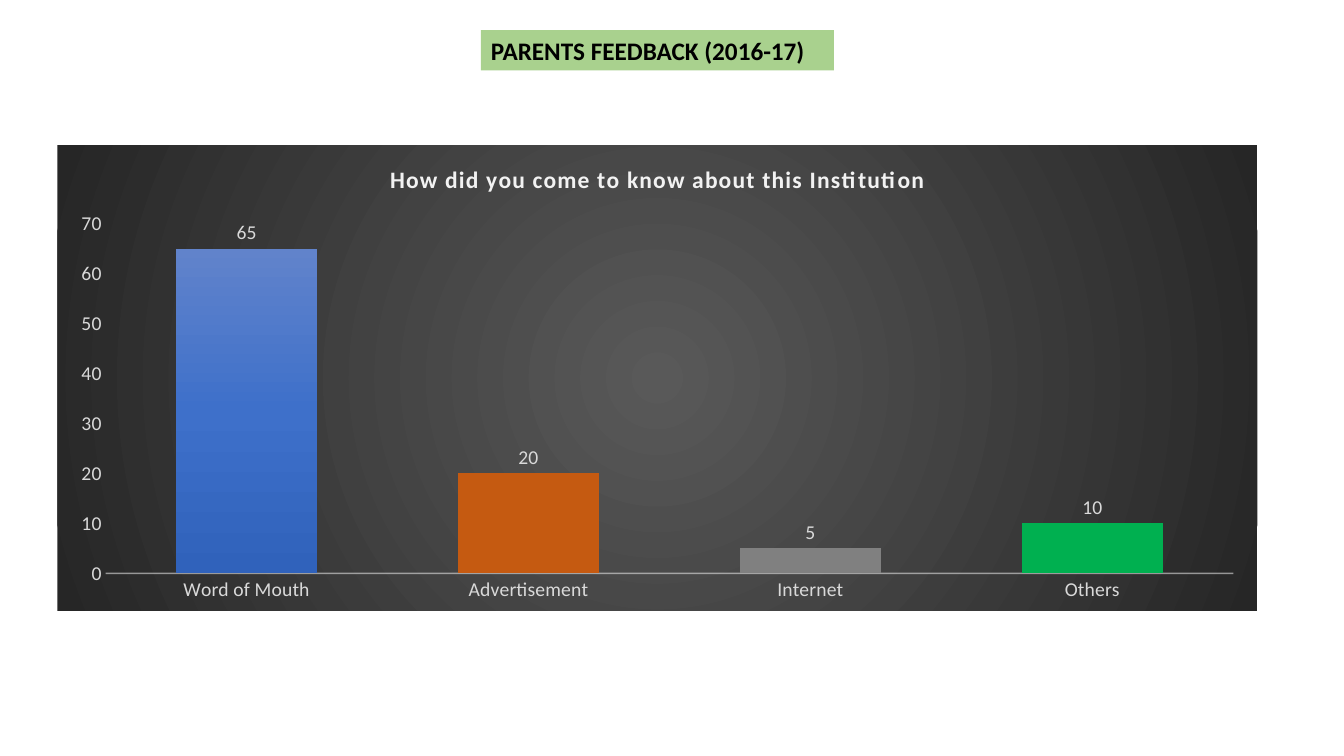
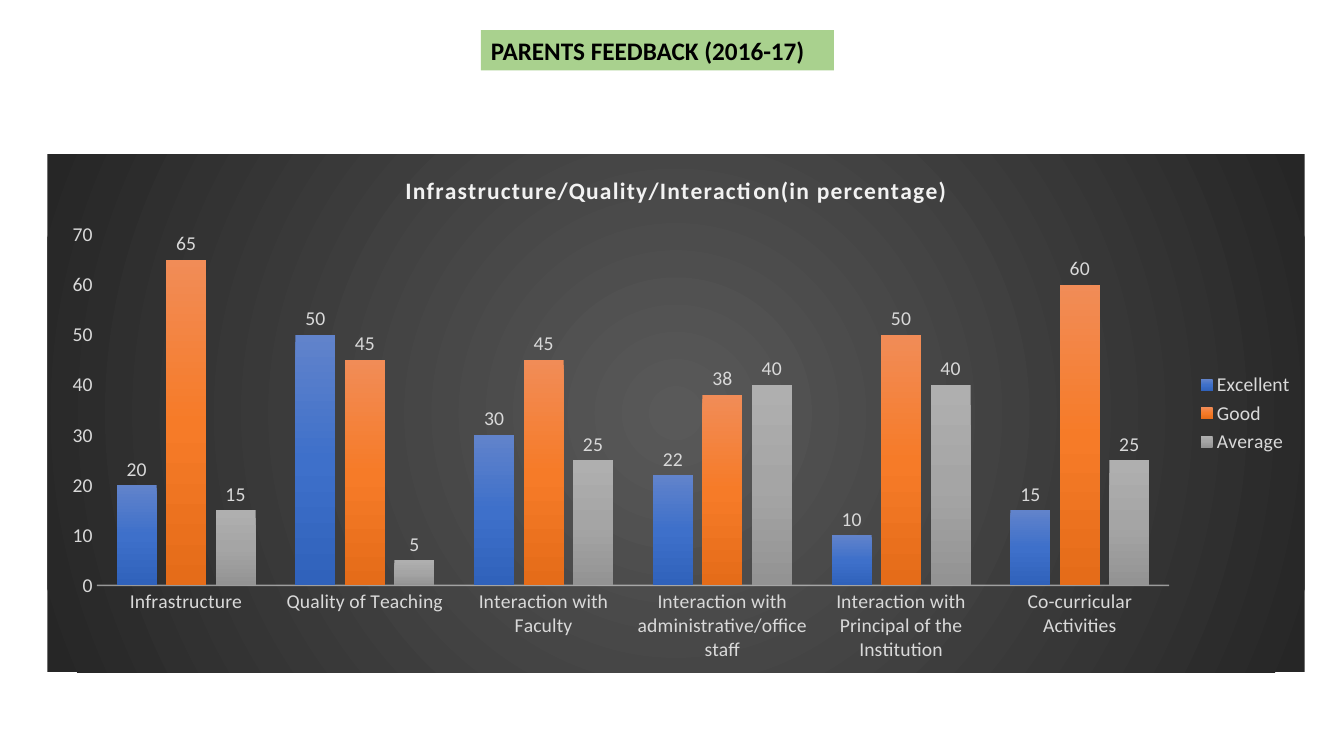
from lxml import etree
from pptx import Presentation
from pptx.chart.data import CategoryChartData
from pptx.dml.color import RGBColor
from pptx.enum.chart import XL_CHART_TYPE, XL_LABEL_POSITION, XL_LEGEND_POSITION, XL_TICK_MARK
from pptx.enum.text import MSO_AUTO_SIZE
from pptx.oxml import parse_xml
from pptx.oxml.ns import nsdecls, qn
from pptx.util import Inches, Pt

COLUMNS = XL_CHART_TYPE.COLUMN_CLUSTERED
OUTSIDE_END = XL_LABEL_POSITION.OUTSIDE_END
LEGEND_RIGHT = XL_LEGEND_POSITION.RIGHT
NO_TICKS = XL_TICK_MARK.NONE
FIT_SHAPE = MSO_AUTO_SIZE.SHAPE_TO_FIT_TEXT

# Shared style
FONT = "Calibri"
BANNER_FILL, BANNER_TEXT = "A9D18E", "000000"
CHART_TEXT, CHART_TITLE = "D9D9D9", "F2F2F2"
BACKDROP = ["595959", "262626"]
BLUE = ["6183CB", "3E70CA", "3062BB"]
ORANGE = ["F18C57", "F67B28", "E56C19"]
GRAY = ["AFAFAF", "A5A5A5", "939393"]
DOWNWARD = '<a:lin ang="5400000" scaled="0"/>'
FROM_CENTER = ('<a:path path="circle"><a:fillToRect l="50000" t="50000" '
               'r="50000" b="50000"/></a:path>')


def color(hex_code):
    return RGBColor.from_string(hex_code)


def style_font(font, size, hex_code, bold=False):
    font.name, font.size, font.bold = FONT, Pt(size), bold
    font.color.rgb = color(hex_code)


def gradient(colors, direction):
    """Return a gradient fill with evenly spaced stops."""
    step = 100000 // (len(colors) - 1)
    stops = "".join(
        f'<a:gs pos="{index * step}"><a:srgbClr val="{hex_code}"/></a:gs>'
        for index, hex_code in enumerate(colors))
    return parse_xml(f'<a:gradFill {nsdecls("a")} rotWithShape="1">'
                     f'<a:gsLst>{stops}</a:gsLst>{direction}</a:gradFill>')


def add_banner(slide, text):
    banner = slide.shapes.add_textbox(Inches(4.77), Inches(0.3), Inches(3.5), Inches(0.4))
    banner.fill.solid()
    banner.fill.fore_color.rgb = color(BANNER_FILL)
    frame = banner.text_frame
    frame.word_wrap = True
    frame.auto_size = FIT_SHAPE
    paragraph = frame.paragraphs[0]
    paragraph.text = text
    style_font(paragraph.font, 18, BANNER_TEXT, bold=True)


def style_chart_title(chart, text):
    chart.has_title = True
    chart.chart_title.include_in_layout = False
    paragraph = chart.chart_title.text_frame.paragraphs[0]
    run = paragraph.add_run()
    run.text = text
    style_font(run.font, 16.8, CHART_TITLE, bold=True)
    run.font._element.set("spc", "100")


def style_axes(chart):
    for axis in (chart.category_axis, chart.value_axis):
        axis.major_tick_mark = axis.minor_tick_mark = NO_TICKS
        axis.has_major_gridlines = False
        style_font(axis.tick_labels.font, 14, CHART_TEXT)
    chart.value_axis.format.line.fill.background()
    line = chart.category_axis.format.line
    line.width = Pt(1)
    line.color.rgb = color(CHART_TITLE)
    # Soften the base line with partial opacity
    line_color = chart.category_axis._element.find(".//" + qn("a:ln")).find(".//" + qn("a:srgbClr"))
    etree.SubElement(line_color, qn("a:alpha"), val="54000")


def add_column_chart(slide, box, title, categories, series_list, point_colors=None):
    """Draw columns; series_list holds (name, values, gradient colors)."""
    data = CategoryChartData()
    data.categories = categories
    for name, values, _ in series_list:
        data.add_series(name, values)
    chart = slide.shapes.add_chart(COLUMNS, *map(Inches, box), data).chart
    style_font(chart.font, 14, "000000")
    style_chart_title(chart, title)
    style_axes(chart)

    # Dark radial background
    background = parse_xml(f'<c:spPr {nsdecls("c", "a")}><a:ln><a:noFill/></a:ln></c:spPr>')
    background.insert(0, gradient(BACKDROP, FROM_CENTER))
    chart._chartSpace.find(qn("c:chart")).addnext(background)

    # Columns and their values
    plot = chart.plots[0]
    plot.gap_width, plot.overlap = 100, -24
    plot.vary_by_categories = False
    for series, (_, _, colors) in zip(plot.series, series_list):
        series._element.get_or_add_spPr().append(gradient(colors, DOWNWARD))
        labels = series.data_labels
        labels.show_value = True
        labels.position = OUTSIDE_END
        style_font(labels.font, 14, CHART_TEXT)
    for index, hex_code in (point_colors or {}).items():
        fill = plot.series[0].points[index].format.fill
        fill.solid()
        fill.fore_color.rgb = color(hex_code)

    chart.has_legend = len(series_list) > 1
    if chart.has_legend:
        chart.legend.position = LEGEND_RIGHT
        chart.legend.include_in_layout = False
        style_font(chart.legend.font, 14, CHART_TEXT)


def add_feedback_slide(presentation, **chart_details):
    slide = presentation.slides.add_slide(presentation.slide_layouts[6])
    add_banner(slide, "PARENTS FEEDBACK (2016-17)")
    add_column_chart(slide, **chart_details)


def main():
    presentation = Presentation()
    presentation.slide_width, presentation.slide_height = Inches(13.33), Inches(7.5)

    # How parents heard of the institution
    question = "How did you come to know about this Institution"
    add_feedback_slide(
        presentation,
        box=(0.57, 1.44, 11.9, 4.62),
        title=question,
        categories=["Word of Mouth", "Advertisement", "Internet", "Others"],
        series_list=[(question, [65, 20, 5, 10], BLUE)],
        point_colors={1: "C55A11", 2: "808080", 3: "00B050"})

    # Ratings by area
    add_feedback_slide(
        presentation,
        box=(0.47, 1.53, 12.47, 5.14),
        title="Infrastructure/Quality/Interaction(in percentage)",
        categories=["Infrastructure", "Quality of Teaching", "Interaction with Faculty",
                    "Interaction with administrative/office staff",
                    "Interaction with Principal of the Institution",
                    "Co-curricular Activities"],
        series_list=[("Excellent", [20, 50, 30, 22, 10, 15], BLUE),
                     ("Good", [65, 45, 45, 38, 50, 60], ORANGE),
                     ("Average", [15, 5, 25, 40, 40, 25], GRAY)])

    presentation.save("out.pptx")


if __name__ == "__main__":
    main()
